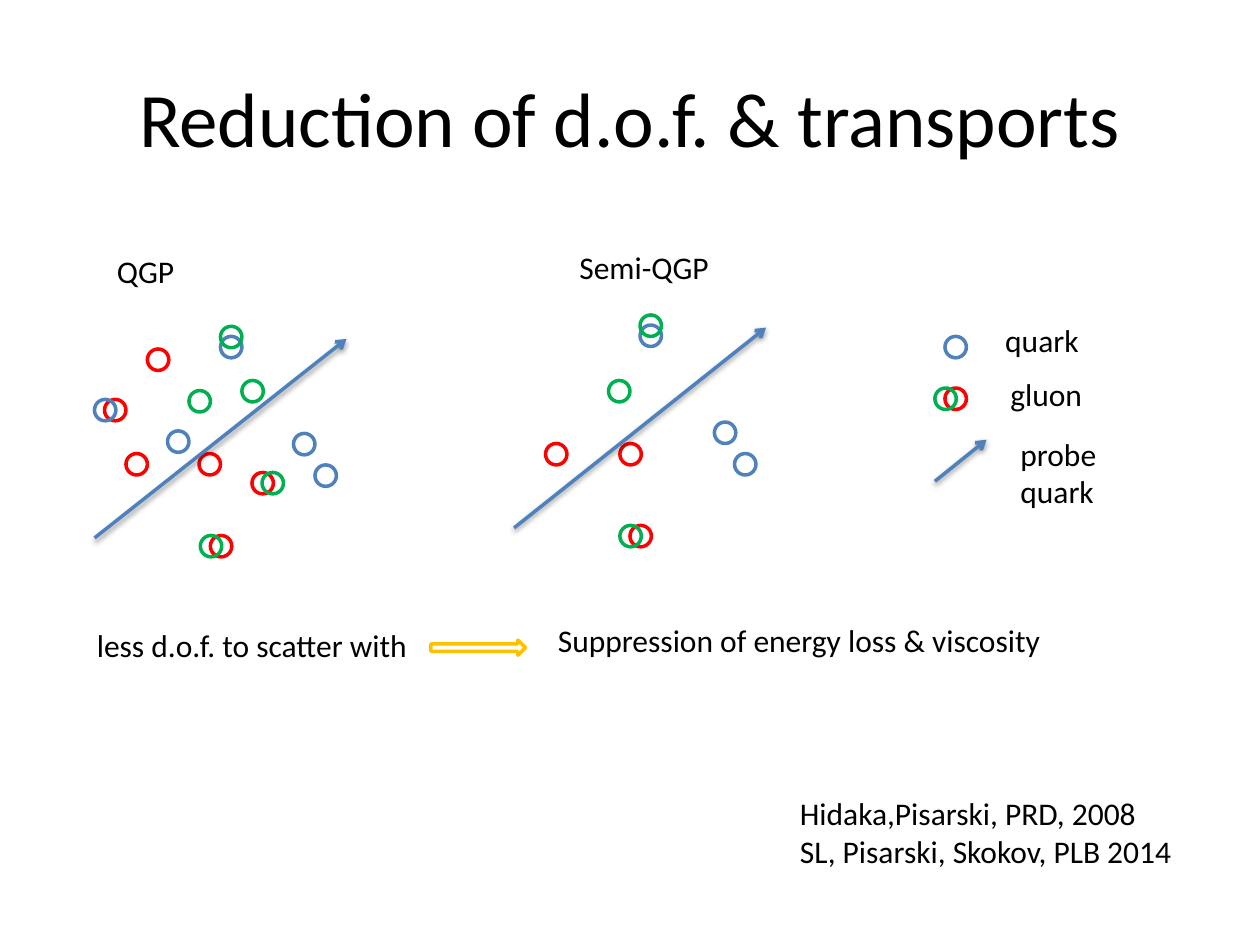
import pptx
import pptx.dml.color
import pptx.enum.shapes
import pptx.enum.text
import pptx.oxml
import pptx.oxml.ns
import pptx.util

Inches, Pt = pptx.util.Inches, pptx.util.Pt
RGBColor = pptx.dml.color.RGBColor
SHAPE = pptx.enum.shapes.MSO_SHAPE

BLUE = RGBColor(0x4F, 0x81, 0xBD)
RED = RGBColor(0xFF, 0x00, 0x00)
GREEN = RGBColor(0x00, 0xB0, 0x50)
AMBER = RGBColor(0xFF, 0xC0, 0x00)
WHITE = RGBColor(0xFF, 0xFF, 0xFF)
BLACK = RGBColor(0x00, 0x00, 0x00)

# Content: positions in inches
TITLE = "Reduction of d.o.f. & transports"
LABELS = [  # left, top, width, lines
    (0.83, 1.95, 0.67, ["QGP"]),
    (4.5, 1.92, 1.24, ["Semi-QGP"]),
    (0.67, 4.92, 2.79, ["less d.o.f. to scatter with"]),
    (4.33, 4.88, 4.17, ["Suppression of energy loss & viscosity"]),
    (6.25, 6.25, 3.25, ["Hidaka,Pisarski, PRD, 2008", "SL, Pisarski, Skokov, PLB 2014"]),
    (7.88, 2.5, 0.96, ["quark"]),
    (7.92, 2.93, 0.96, ["gluon"]),
    (8, 3.4, 0.88, ["probe quark"]),
]
# Each panel: single quarks (left, top, colour, filled), a probe track, and
# overlapping pairs (left, top, back colour, front colour, front dx, front dy)
STEP = 0.08
PANELS = [
    {  # QGP
        "quarks": [(2.33, 3.44, BLUE, True), (1.5, 3.1, GREEN, True), (1, 3.6, RED, False),
                   (1.17, 2.77, RED, False), (1.92, 3.02, GREEN, False),
                   (2.5, 3.69, BLUE, True), (1.58, 3.6, RED, True), (1.33, 3.42, BLUE, True)],
        "probe": (0.75, 4.27, 2.75, 2.69),
        "pairs": [(1.67, 4.25, RED, GREEN, -STEP, 0), (1.75, 2.67, BLUE, GREEN, 0, -STEP),
                  (0.83, 3.17, RED, BLUE, -STEP, 0), (2, 3.75, RED, GREEN, STEP, 0)],
    },
    {  # Semi-QGP
        "quarks": [(5.67, 3.35, BLUE, True), (4.83, 3.02, GREEN, True), (4.33, 3.52, RED, False),
                   (5.83, 3.6, BLUE, True), (4.92, 3.52, RED, True)],
        "probe": (4.08, 4.19, 6.08, 2.6),
        "pairs": [(5, 4.17, RED, GREEN, -STEP, 0), (5.08, 2.58, BLUE, GREEN, 0, -STEP)],
    },
    {  # Legend
        "quarks": [(7.5, 2.67, BLUE, True)],
        "probe": (7.42, 3.82, 7.83, 3.49),
        "pairs": [(7.5, 3.08, RED, GREEN, -STEP, 0)],
    },
]
SUPPRESSION_ARROW = (3.42, 5.08, 0.75, 0.12)
DIAMETER = 0.17
LINE_WIDTH = Pt(2)
SHADOW = ('<a:effectLst %s><a:outerShdw blurRad="40000" dist="20000" dir="5400000" rotWithShape="0">'
          '<a:srgbClr val="000000"><a:alpha val="38000"/></a:srgbClr></a:outerShdw></a:effectLst>'
          % pptx.oxml.ns.nsdecls("a"))
ARROWHEAD = '<a:tailEnd %s type="arrow"/>' % pptx.oxml.ns.nsdecls("a")


def style_font(font, size):
    for name, value in {"name": "Calibri", "size": Pt(size)}.items():
        setattr(font, name, value)
    font.color.rgb = BLACK


def add_outline(slide, kind, box, color, filled=False):
    sp = slide.shapes.add_shape(kind, *map(Inches, box))
    sp.shadow.inherit = False
    if filled:
        sp.fill.solid()
        sp.fill.fore_color.rgb = WHITE
    else:
        sp.fill.background()
    sp.line.color.rgb = color
    sp.line.width = LINE_WIDTH


def add_circle(slide, left, top, color, filled=False):
    add_outline(slide, SHAPE.OVAL, (left, top, DIAMETER, DIAMETER), color, filled)


def add_probe(slide, ends):
    cxn = slide.shapes.add_connector(pptx.enum.shapes.MSO_CONNECTOR.STRAIGHT, *map(Inches, ends))
    cxn.line.color.rgb = BLUE
    cxn.line.width = LINE_WIDTH
    cxn.line._get_or_add_ln().append(pptx.oxml.parse_xml(ARROWHEAD))
    cxn._element.spPr.append(pptx.oxml.parse_xml(SHADOW))


def add_label(slide, left, top, width, lines):
    height = 0.4 if len(lines) == 1 and lines[0] != "probe quark" else 0.71
    tf = slide.shapes.add_textbox(*map(Inches, (left, top, width, height))).text_frame
    tf.word_wrap = True
    tf.text = "\n".join(lines)
    for p in tf.paragraphs:
        style_font(p.runs[0].font, 18)


def main():
    prs = pptx.Presentation()
    prs.slide_width, prs.slide_height = Inches(10), Inches(7.5)
    slide = prs.slides.add_slide(prs.slide_layouts[5])

    # Title
    title = slide.shapes.title
    box = {"left": 0.5, "top": 0.3, "width": 9, "height": 1.25}
    for name, value in box.items():
        setattr(title, name, Inches(value))
    title.text_frame.text = TITLE
    title.text_frame.vertical_anchor = pptx.enum.text.MSO_ANCHOR.MIDDLE
    p = title.text_frame.paragraphs[0]
    p.alignment = pptx.enum.text.PP_ALIGN.CENTER
    style_font(p.runs[0].font, 44)

    # Plasma panels and legend
    for panel in PANELS:
        for quark in panel["quarks"]:
            add_circle(slide, *quark)
        add_probe(slide, panel["probe"])
        for left, top, back, front, dx, dy in panel["pairs"]:
            add_circle(slide, left, top, back)
            add_circle(slide, left + dx, top + dy, front)

    # Conclusion arrow and all labels
    add_outline(slide, SHAPE.RIGHT_ARROW, SUPPRESSION_ARROW, AMBER)
    for label in LABELS:
        add_label(slide, *label)

    prs.save("out.pptx")


if __name__ == "__main__":
    main()
